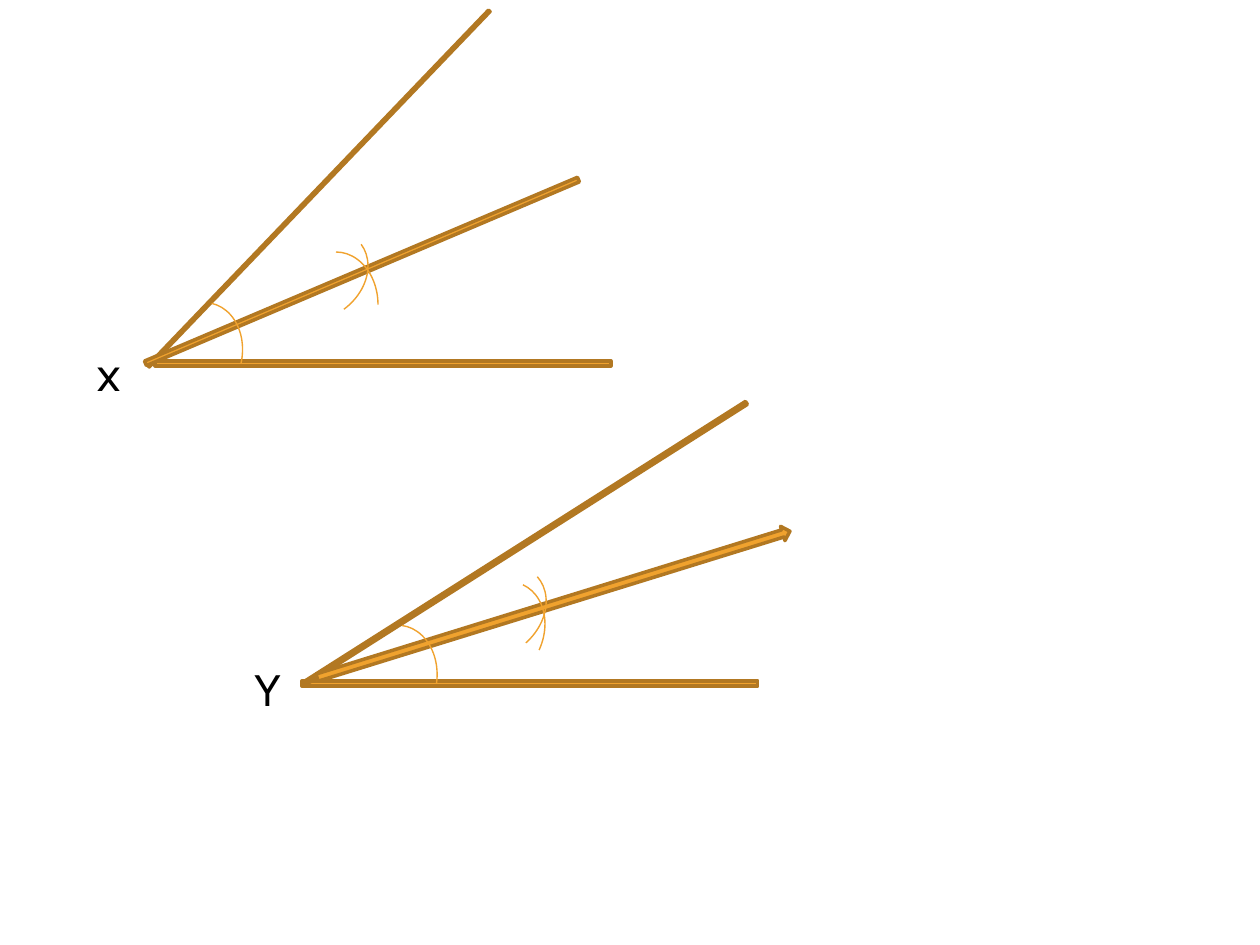
import pptx
import pptx.util
import pptx.dml.color
import pptx.enum.shapes
import pptx.enum.text

SHAPE = pptx.enum.shapes.MSO_SHAPE
ORANGE = pptx.dml.color.RGBColor(0xF0, 0xA2, 0x2E)
BROWN = pptx.dml.color.RGBColor(0xB2, 0x78, 0x22)
BLACK = pptx.dml.color.RGBColor(0, 0, 0)
PX = 914400 / 126

# Each angle: two sides and a bisector as (left, top, width, height, rotation)
ANGLES = [
    {"sides": [(73, 353, 620, 21, 0), (-16, 184, 670, 9, 313.8)],
     "bisector": (SHAPE.MATH_MINUS, (42, 261, 640, 21, 337))},
    {"sides": [(220, 672, 620, 23, 0), (168, 536, 714, 15, 327.6)],
     "bisector": (SHAPE.RIGHT_ARROW, (306, 597, 495, 15, 342.8))},
]

# Compass arcs share one size: (left, top, rotation)
ARC_SIZE = (84, 105)
ARCS = [
    (459, 580, 24.7), (277, 223, 53.5), (294, 252, 0),
    (158, 302, 12.9), (456, 559, 48.5), (353, 625, 7.7),
]

# Vertex labels: (text, left, top, width, height)
LABELS = [("x", 84, 336, 53, 72), ("Y", 242, 651, 42, 72)]


def emu(*lengths):
    return [pptx.util.Emu(round(n * PX)) for n in lengths]


def add_shape(shapes, kind, left, top, width, height, rotation):
    sp = shapes.add_shape(kind, *emu(left, top, width, height))
    sp.rotation = rotation
    sp.shadow.inherit = False
    return sp


def add_bar(shapes, kind, box):
    sp = add_shape(shapes, kind, *box)
    sp.fill.solid()
    sp.fill.fore_color.rgb = ORANGE
    sp.line.color.rgb = BROWN
    sp.line.width = pptx.util.Pt(2)


def add_arc(shapes, left, top, rotation):
    sp = add_shape(shapes, SHAPE.ARC, left, top, *ARC_SIZE, rotation)
    sp.fill.background()
    sp.line.color.rgb = ORANGE
    sp.line.width = pptx.util.Pt(0.79)


def add_label(shapes, text, *box):
    tf = shapes.add_textbox(*emu(*box)).text_frame
    tf.word_wrap = True
    tf.auto_size = pptx.enum.text.MSO_AUTO_SIZE.SHAPE_TO_FIT_TEXT
    p = tf.paragraphs[0]
    p.text = text
    p.font.name = "Karla"
    p.font.size = pptx.util.Pt(28)
    p.font.color.rgb = BLACK


def main():
    prs = pptx.Presentation()
    prs.slide_width, prs.slide_height = emu(1260, 945)
    s = prs.slides.add_slide(prs.slide_layouts[6])

    # Angles with their bisectors
    for angle in ANGLES:
        group = s.shapes.add_group_shape()
        for side in angle["sides"]:
            add_bar(group.shapes, SHAPE.MATH_MINUS, side)
        add_bar(s.shapes, *angle["bisector"])

    # Compass arcs
    for arc in ARCS:
        add_arc(s.shapes, *arc)

    # Vertex labels
    for label in LABELS:
        add_label(s.shapes, *label)

    prs.save("out.pptx")


if __name__ == "__main__":
    main()
